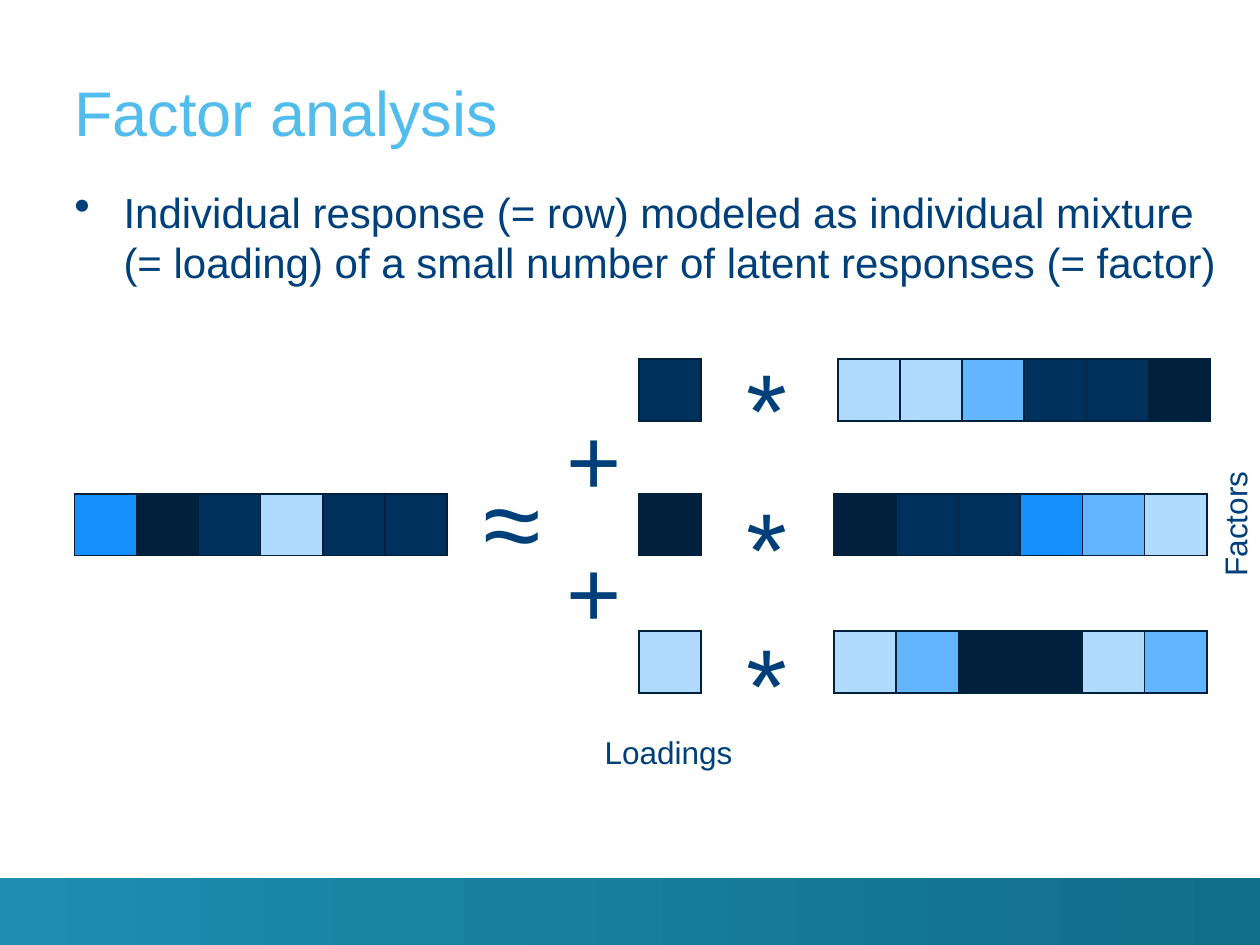
from lxml import etree
from pptx import Presentation
from pptx.dml.color import RGBColor
from pptx.enum import shapes, text
from pptx.oxml.ns import qn
from pptx.util import Inches, Pt

SKY = RGBColor(0x52, 0xBD, 0xEC)
NAVY = RGBColor(0x00, 0x40, 0x7A)
TEAL = RGBColor(0x1D, 0x8D, 0xB0)
DEEP = RGBColor(0x11, 0x6E, 0x8A)
INK = RGBColor(0x00, 0x20, 0x3D)
DARK = RGBColor(0x00, 0x30, 0x5C)
BLUE = RGBColor(0x16, 0x90, 0xFF)
MID = RGBColor(0x64, 0xB5, 0xFF)
PALE = RGBColor(0xB1, 0xDA, 0xFF)

CELL = 0.49
TERMS = [
    (2.85, 2.68, DARK, 6.65, [PALE, PALE, MID, DARK, DARK, INK]),
    (3.92, 3.78, INK, 6.62, [INK, DARK, DARK, BLUE, MID, PALE]),
    (5.01, 4.86, PALE, 6.62, [PALE, MID, INK, INK, PALE, MID]),
]


def add_band(slide):
    band = slide.shapes.add_shape(
        shapes.MSO_SHAPE.RECTANGLE, 0, Inches(6.97), Inches(10), Inches(0.53))
    band.shadow.inherit = False
    band.line.fill.background()
    band.fill.gradient()
    band.fill.gradient_angle = 0
    for stop, color in zip(band.fill.gradient_stops, (TEAL, DEEP)):
        stop.color.rgb = color


def add_text(slide, words, box, size, color=NAVY, wrap=False):
    shape = slide.shapes.add_textbox(*map(Inches, box))
    frame = shape.text_frame
    frame.word_wrap = wrap
    if wrap:
        frame.margin_left = frame.margin_right = 0
        frame.margin_top = frame.margin_bottom = 0
    else:
        frame.auto_size = text.MSO_AUTO_SIZE.SHAPE_TO_FIT_TEXT
    frame.text = words
    font = frame.paragraphs[0].font
    font.name, font.size, font.color.rgb = "Arial", Pt(size), color
    return shape


def add_bullet(slide, words, box, size):
    para = add_text(slide, words, box, size, wrap=True).text_frame.paragraphs[0]
    props = para._p.get_or_add_pPr()
    props.set("marL", str(Inches(0.39)))
    props.set("indent", str(-Inches(0.39)))
    scale = etree.Element(qn("a:buSzPct"), val="110000")
    mark = etree.Element(qn("a:buChar"), char="•")
    props.insert(0, scale)
    props.insert(1, mark)


def set_border(cell, color):
    props = cell._tc.get_or_add_tcPr()
    for place, side in enumerate(("lnL", "lnR", "lnT", "lnB")):
        line = etree.Element(qn("a:" + side), w=str(Pt(1)))
        fill = etree.SubElement(line, qn("a:solidFill"))
        etree.SubElement(fill, qn("a:srgbClr"), val=str(color))
        props.insert(place, line)


def add_row(slide, left, top, colors):
    table = slide.shapes.add_table(
        1, len(colors), Inches(left), Inches(top),
        Inches(CELL * len(colors)), Inches(CELL)).table
    table.first_row = table.horz_banding = False
    for col, cell, color in zip(table.columns, table.rows[0].cells, colors):
        col.width = Inches(CELL + 0.003)
        cell.fill.solid()
        cell.fill.fore_color.rgb = color
        set_border(cell, INK)


def main():
    deck = Presentation()
    deck.slide_width, deck.slide_height = Inches(10), Inches(7.5)
    slide = deck.slides.add_slide(deck.slide_layouts[6])
    add_band(slide)
    title = add_text(slide, "Factor analysis", (0.59, 0.2, 9.11, 0.98), 36, SKY, True)
    title.text_frame.vertical_anchor = text.MSO_ANCHOR.BOTTOM
    add_bullet(
        slide,
        "Individual response (= row) modeled as individual mixture "
        "(= loading) of a small number of latent responses (= factor)",
        (0.59, 1.48, 9.11, 4.84), 24)

    add_row(slide, 0.59, 3.92, [BLUE, INK, DARK, PALE, DARK, DARK])
    add_text(slide, "≈", (3.74, 3.57, 0.66, 1.11), 60)
    for top, star, load, left, factor in TERMS:
        add_row(slide, 5.07, top, [load])
        add_text(slide, "*", (5.83, star, 0.53, 1.11), 60)
        add_row(slide, left, top, factor)
    for top in (3.13, 4.18):
        add_text(slide, "+", (4.4, top, 0.64, 1.01), 54)

    label = add_text(slide, "Factors", (9.28, 3.96, 1.04, 0.4), 18)
    label.rotation = 270
    label.text_frame.paragraphs[0].alignment = text.PP_ALIGN.CENTER
    add_text(slide, "Loadings", (4.7, 5.77, 1.23, 0.4), 18)
    deck.save("out.pptx")


if __name__ == "__main__":
    main()
